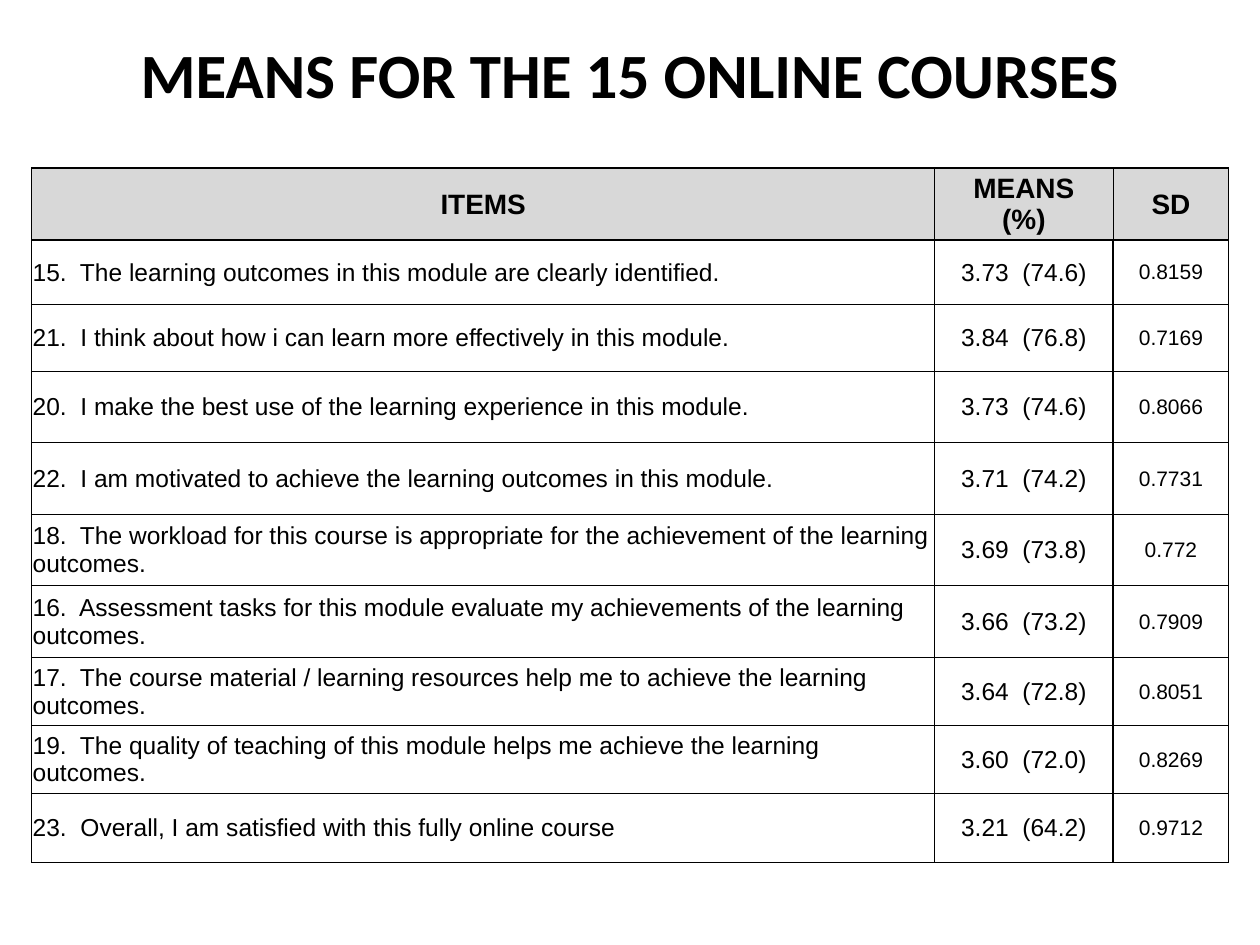
from lxml.etree import SubElement
from pptx import Presentation
from pptx.dml.color import RGBColor
from pptx.enum.text import MSO_ANCHOR as Anchor, PP_ALIGN as Align
from pptx.oxml.ns import qn
from pptx.util import Cm, Pt

COLORS = {"ink": "000000", "header": "D8D8D8", "paper": "FFFFFF"}
COLUMN_WIDTHS = (18.2, 3.6, 2.33)
ROW_HEIGHTS = (1.45, 1.29, 1.35, 1.44, 1.44, 1.44, 1.45, 1.37, 1.37, 1.4)
HEADINGS = ("ITEMS", "MEANS\n(%)", "SD")
COURSE_ITEMS = (
    ("15.  The learning outcomes in this module are clearly identified.", "3.73  (74.6)", "0.8159"),
    ("21.  I think about how i can learn more effectively in this module.", "3.84  (76.8)", "0.7169"),
    ("20.  I make the best use of the learning experience in this module.", "3.73  (74.6)", "0.8066"),
    ("22.  I am motivated to achieve the learning outcomes in this module.", "3.71  (74.2)", "0.7731"),
    ("18.  The workload for this course is appropriate for the achievement of the learning outcomes.",
     "3.69  (73.8)", "0.772"),
    ("16.  Assessment tasks for this module evaluate my achievements of the learning outcomes.",
     "3.66  (73.2)", "0.7909"),
    ("17.  The course material / learning resources help me to achieve the learning outcomes.",
     "3.64  (72.8)", "0.8051"),
    ("19.  The quality of teaching of this module helps me achieve the learning outcomes.",
     "3.60  (72.0)", "0.8269"),
    ("23.  Overall, I am satisfied with this fully online course", "3.21  (64.2)", "0.9712"),
)
BODY_FORMATS = (
    {"size": 14, "align": Align.LEFT, "fill": "paper"},
    {"size": 14},
    {"size": 12, "fill": "paper"},
)


def write_text(frame, text, size=14, font="Arial", bold=False, align=Align.CENTER):
    """Write one paragraph per line of text in the given format."""
    frame.word_wrap = True
    for index, line in enumerate(text.split("\n")):
        para = frame.add_paragraph() if index else frame.paragraphs[0]
        para.alignment = align
        span = para.add_run()
        span.text = line
        span.font.name = font
        span.font.size = Pt(size)
        span.font.bold = bold
        span.font.color.rgb = RGBColor.from_string(COLORS["ink"])


def add_title(page, text):
    """Place and format the title placeholder."""
    box = page.shapes.title
    box.left, box.top, box.width, box.height = Cm(1.27), Cm(0.43), Cm(22.86), Cm(2.11)
    box.text_frame.vertical_anchor = Anchor.MIDDLE
    write_text(box.text_frame, text, size=36, font="Calibri", bold=True)


def set_borders(cell, **widths):
    """Draw the cell's edges, with widths in points keyed by L, R, T and B."""
    properties = cell._tc.get_or_add_tcPr()
    for side, width in widths.items():
        line = SubElement(properties, qn(f"a:ln{side}"), w=str(Pt(width)))
        fill = SubElement(line, qn("a:solidFill"))
        SubElement(fill, qn("a:srgbClr"), val=COLORS["ink"])


def fill_cell(cell, text, borders, fill=None, **text_format):
    """Give a table cell its text, borders and background."""
    cell.margin_left = cell.margin_right = cell.margin_top = Cm(0.02)
    cell.margin_bottom = 0
    cell.vertical_anchor = Anchor.MIDDLE
    set_borders(cell, **borders)
    if fill:
        cell.fill.solid()
        cell.fill.fore_color.rgb = RGBColor.from_string(COLORS[fill])
    else:
        cell.fill.background()
    write_text(cell.text_frame, text, **text_format)


def add_means_table(page):
    """Add the table of item means and standard deviations."""
    shape = page.shapes.add_table(
        len(ROW_HEIGHTS), len(COLUMN_WIDTHS), Cm(0.64), Cm(3.39),
        Cm(sum(COLUMN_WIDTHS)), Cm(sum(ROW_HEIGHTS)))
    table = shape.table
    table.first_row = table.horz_banding = False
    for column, width in zip(table.columns, COLUMN_WIDTHS):
        column.width = Cm(width)
    for row, height in zip(table.rows, ROW_HEIGHTS):
        row.height = Cm(height)
    last_column = len(HEADINGS) - 1
    for index, heading in enumerate(HEADINGS):
        borders = {"L": 0.5 if index else 1, "R": 1 if index == last_column else 0.5, "T": 1, "B": 1}
        fill_cell(table.cell(0, index), heading, borders, fill="header", size=16, bold=True)
    for number, values in enumerate(COURSE_ITEMS, start=1):
        borders = {"L": 1, "R": 1, "T": 1 if number == 1 else 0.5,
                   "B": 1 if number == len(COURSE_ITEMS) else 0.5}
        for index, (value, cell_format) in enumerate(zip(values, BODY_FORMATS)):
            fill_cell(table.cell(number, index), value, borders, **cell_format)


def main():
    """Build the slide and save the deck."""
    deck = Presentation()
    deck.slide_width, deck.slide_height = Cm(25.4), Cm(19.05)
    page = deck.slides.add_slide(deck.slide_layouts.get_by_name("Title Only"))
    add_title(page, "MEANS FOR THE 15 ONLINE COURSES")
    add_means_table(page)
    deck.save("out.pptx")


if __name__ == "__main__":
    main()
